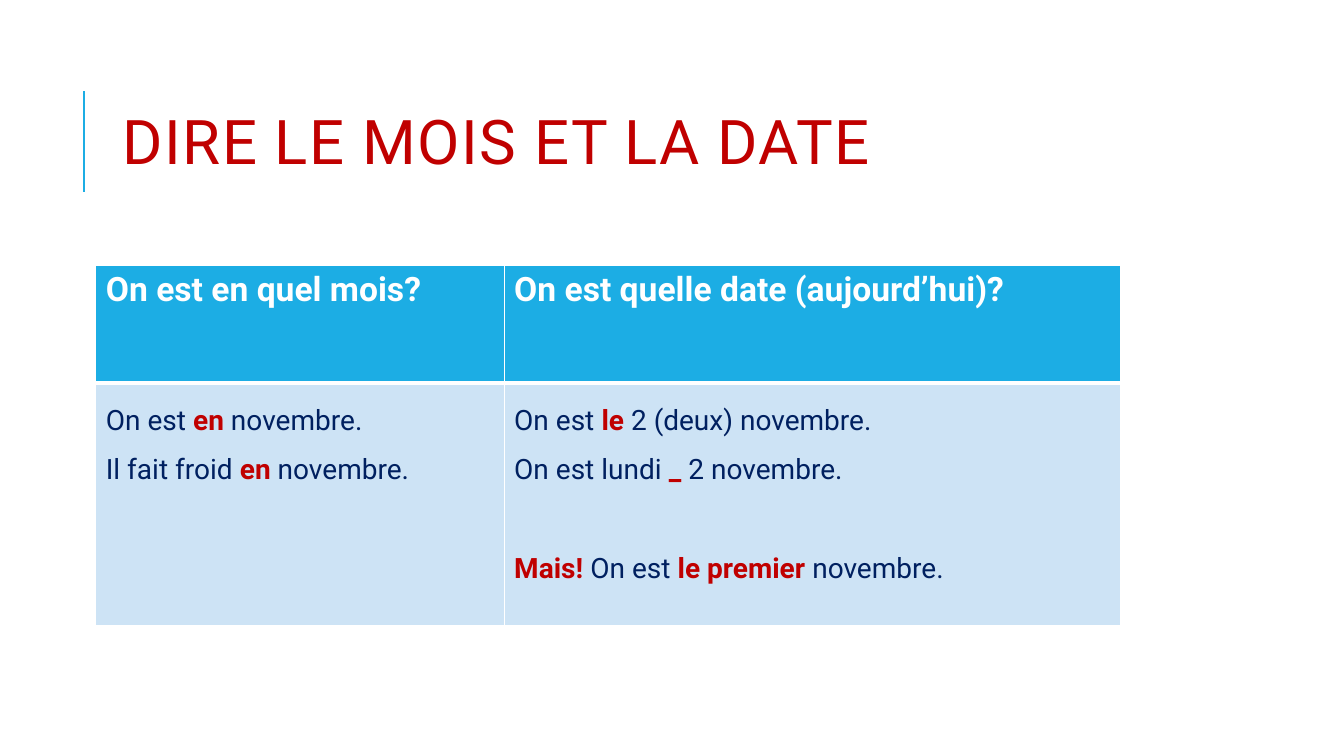
import dataclasses

import lxml.etree
import pptx
import pptx.dml.color
import pptx.enum.shapes
import pptx.enum.text
import pptx.oxml.ns
import pptx.util
from pptx.util import Inches


@dataclasses.dataclass(frozen=True)
class Theme:
    font: str = "Roboto"
    accent: str = "1CADE4"
    band: str = "CDE3F5"
    red: str = "C00000"
    navy: str = "002060"
    white: str = "FFFFFF"
    title_size: int = 44
    header_size: int = 24
    body_size: int = 20


def rgb(value):
    return pptx.dml.color.RGBColor.from_string(value)


def add_child(parent, tag, **attributes):
    return lxml.etree.SubElement(parent, pptx.oxml.ns.qn(tag), **attributes)


class SlideBuilder:
    def __init__(self, slide, theme):
        self.slide = slide
        self.theme = theme

    def style(self, paragraph, size, color, bold=False):
        font = paragraph.font
        font.name = self.theme.font
        font.size = pptx.util.Pt(size)
        font.bold = bold
        font.color.rgb = rgb(color)

    def line(self, x1, y1, x2, y2, width):
        connector = self.slide.shapes.add_connector(
            pptx.enum.shapes.MSO_CONNECTOR.STRAIGHT,
            Inches(x1), Inches(y1), Inches(x2), Inches(y2))
        connector.line.color.rgb = rgb(self.theme.accent)
        connector.line.width = pptx.util.Pt(width)
        add_child(connector._element.spPr, "a:effectLst")

    def title(self, text, left, top, width, height):
        box = self.slide.shapes.add_textbox(
            Inches(left), Inches(top), Inches(width), Inches(height))
        frame = box.text_frame
        frame.word_wrap = True
        frame.vertical_anchor = pptx.enum.text.MSO_ANCHOR.MIDDLE
        paragraph = frame.paragraphs[0]
        paragraph.line_spacing = 0.8
        self.style(paragraph, self.theme.title_size, self.theme.red)
        run = paragraph.add_run()
        run.text = text
        # Letter spacing in hundredths of a point
        run._r.get_or_add_rPr().set("spc", "100")

    def table(self, left, top, widths, heights):
        frame = self.slide.shapes.add_table(
            len(heights), len(widths), Inches(left), Inches(top),
            Inches(sum(widths)), Inches(sum(heights)))
        table = frame.table
        for column, width in zip(table.columns, widths):
            column.width = Inches(width)
        for row, height in zip(table.rows, heights):
            row.height = Inches(height)
        return table

    def cell(self, cell, fill, top_border=1, bottom_border=1):
        properties = cell._tc.get_or_add_tcPr()
        borders = {"L": 1, "R": 1, "T": top_border, "B": bottom_border}
        for side, width in borders.items():
            border = add_child(properties, f"a:ln{side}", w=str(pptx.util.Pt(width)))
            add_child(add_child(border, "a:solidFill"), "a:srgbClr", val=self.theme.white)
        cell.fill.solid()
        cell.fill.fore_color.rgb = rgb(fill)

    def header_cell(self, cell, text):
        self.cell(cell, self.theme.accent, bottom_border=3)
        cell.text = text
        self.style(cell.text_frame.paragraphs[0], self.theme.header_size,
                   self.theme.white, bold=True)

    def body_cell(self, cell, sentences):
        """Each sentence is (space before in points, text with *key words*)."""
        self.cell(cell, self.theme.band, top_border=3)
        frame = cell.text_frame
        for index, (space_before, sentence) in enumerate(sentences):
            paragraph = frame.add_paragraph() if index else frame.paragraphs[0]
            paragraph.line_spacing = 1.5
            paragraph.space_before = pptx.util.Pt(space_before)
            self.style(paragraph, self.theme.body_size, self.theme.navy)
            for position, text in enumerate(sentence.split("*")):
                if not text:
                    continue
                run = paragraph.add_run()
                run.text = text
                if position % 2:
                    run.font.bold = True
                    run.font.color.rgb = rgb(self.theme.red)


def main():
    presentation = pptx.Presentation()
    presentation.slide_width = Inches(13.33)
    presentation.slide_height = Inches(7.5)
    slide = presentation.slides.add_slide(presentation.slide_layouts[6])
    builder = SlideBuilder(slide, Theme())

    # Title with its accent rule
    builder.line(0.83, 1.9, 0.83, 0.9, 1.5)
    builder.title("DIRE LE MOIS ET LA DATE", 1.12, 0.64, 10.63, 1.64)

    # Month and date table
    columns = [
        ("On est en quel mois?",
         [(0, "On est *en* novembre."),
          (0, "Il fait froid *en* novembre.")]),
        ("On est quelle date (aujourd’hui)?",
         [(0, "On est *le* 2 (deux) novembre."),
          (0, "On est lundi *_* 2 novembre."),
          (35, "*Mais!* On est *le premier *novembre.")]),
    ]
    table = builder.table(0.95, 2.63, widths=[4.05, 6.11], heights=[1.17, 2.41])
    for index, (question, answers) in enumerate(columns):
        builder.header_cell(table.cell(0, index), question)
        builder.body_cell(table.cell(1, index), answers)

    presentation.save("out.pptx")


if __name__ == "__main__":
    main()
